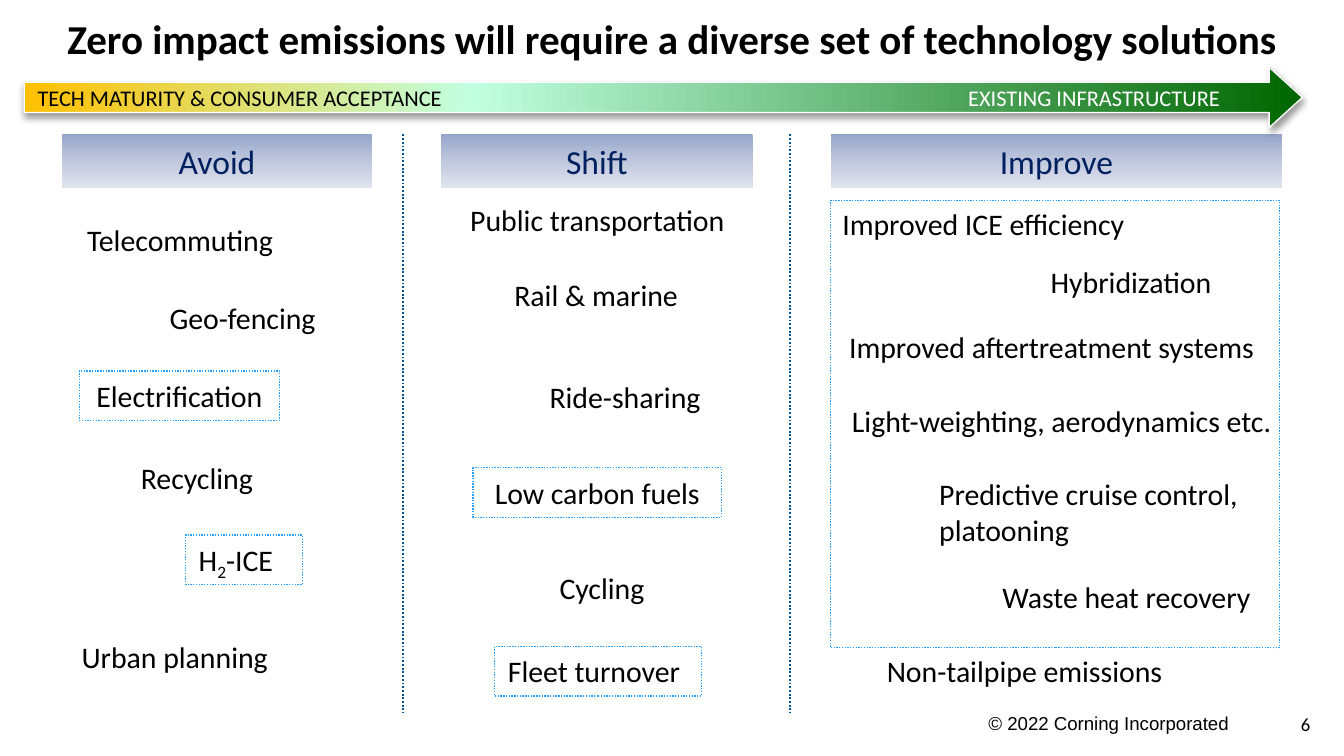
import pptx
import pptx.util
import pptx.oxml
import pptx.oxml.ns
import pptx.dml.color
import pptx.enum.text
import pptx.enum.dml
import pptx.enum.shapes
from lxml import etree

Pt = pptx.util.Pt
ALIGN = pptx.enum.text.PP_ALIGN
ANCHOR = pptx.enum.text.MSO_ANCHOR
SHAPE = pptx.enum.shapes.MSO_SHAPE
LEFT, MID, RIGHT = ALIGN.LEFT, ALIGN.CENTER, ALIGN.RIGHT

# Content: text between bars is subscript
TITLE = "Zero impact emissions will require a diverse set of technology solutions"
SPAN = ("TECH MATURITY & CONSUMER ACCEPTANCE", "EXISTING INFRASTRUCTURE")
RIGHTS = "© 2022 Corning Incorporated"
PAGE = "6"

# Column: heading, left, width, items (text, left, top, width, align, look)
COLS = [
    ("Avoid", 33.1, 166.3, [
        ("Telecommuting", 31.7, 115.2, 129.6, MID, ""),
        ("Geo-fencing", 76.3, 157, 107.3, MID, ""),
        ("Electrification", 42.5, 198.7, 107.3, MID, "line"),
        ("Recycling", 50.4, 242.6, 110.2, MID, ""),
        ("H|2|-ICE", 99.4, 286.6, 62.6, LEFT, "line fill"),
        ("Urban planning", 34.6, 338.4, 118.1, MID, ""),
    ]),
    ("Shift", 236.2, 167, [
        ("Public transportation", 244.1, 104.4, 151.9, MID, ""),
        ("Rail & marine", 243.4, 144.7, 151.9, MID, ""),
        ("Ride-sharing", 287.3, 199.4, 107.3, LEFT, ""),
        ("Low carbon fuels", 253.4, 250.6, 133.2, MID, "line"),
        ("Cycling", 260.6, 301.7, 123.8, MID, ""),
        ("Fleet turnover", 265, 346.3, 110.9, LEFT, "line fill"),
    ]),
    ("Improve", 445, 241.9, [
        ("Improved ICE efficiency", 444.2, 106.6, 167.8, LEFT, ""),
        ("Hybridization", 555.8, 137.5, 115.9, LEFT, ""),
        ("Improved aftertreatment systems", 447.8, 172.8, 234, LEFT, ""),
        ("Light-weighting, aerodynamics etc.", 447.8, 212.4, 240.5, RIGHT, ""),
        ("Predictive cruise control, platooning", 496.1, 251.3, 177.1, LEFT, ""),
        ("Waste heat recovery", 529.9, 306.7, 150.5, LEFT, "fill"),
        ("Non-tailpipe emissions", 468, 346.3, 213.1, LEFT, "fill"),
    ]),
]
RULES = (216, 423.4)
FRAME = (445, 107.3, 240.5, 239.8)

THEME = {
    "font": "Calibri", "foot": "Arial",
    "title": 22, "head": 18, "body": 16, "span": 12, "small": 10,
    "ink": "000000", "navy": "002060", "white": "FFFFFF",
    "blue": "259FFF", "rule": "005293",
    "bar": [(0, "96A5CB"), (50, "C0C8DD"), (100, "E0E4EE")],
    "arrow": [(0, "FFC000"), (35, "C1FFE1"), (100, "006600")],
}
NS = pptx.oxml.ns.nsdecls("a")


def rgb(key):
    return pptx.dml.color.RGBColor.from_string(THEME[key])


def style(font, size, color="ink", face="font"):
    font.name, font.size = THEME[face], Pt(THEME[size])
    font.color.rgb = rgb(color)


def stroke(line, color, width, dots=True):
    line.color.rgb = rgb(color)
    line.width = Pt(width)
    if dots:
        line.dash_style = pptx.enum.dml.MSO_LINE.ROUND_DOT


def blend(fill, key, angle):
    fill.gradient()
    fill.gradient_angle = angle
    stops = fill._xPr.find(".//" + pptx.oxml.ns.qn("a:gsLst"))
    stops.clear()
    for pos, color in THEME[key]:
        stops.append(pptx.oxml.parse_xml(
            f'<a:gs {NS} pos="{pos * 1000}"><a:srgbClr val="{color}"/></a:gs>'))


def write(shape, text, size, align, color="ink", face="font"):
    frame = shape.text_frame
    frame.word_wrap = True
    para = frame.paragraphs[0]
    para.alignment = align
    for num, part in enumerate(text.split("|")):
        run = para.add_run()
        run.text = part
        if num % 2:
            run._r.get_or_add_rPr().set("baseline", "-25000")
    style(para.font, size, color, face)
    return frame


def block(kind, *box):
    shape = slide.shapes.add_shape(kind, *map(Pt, box))
    shape.shadow.inherit = False
    shape.fill.background()
    shape.line.fill.background()
    shape.text_frame.vertical_anchor = ANCHOR.TOP
    return shape


def label(*box):
    return slide.shapes.add_textbox(*map(Pt, box))


deck = pptx.Presentation()
deck.slide_width, deck.slide_height = Pt(720), Pt(405)
slide = deck.slides.add_slide(deck.slide_layouts[5])

# Title
title = slide.shapes.title
title.left, title.top, title.width, title.height = map(Pt, (18, 7.2, 684, 54))
frame = write(title, TITLE, "title", MID)
frame.auto_size = pptx.enum.text.MSO_AUTO_SIZE.NONE
frame.vertical_anchor = ANCHOR.BOTTOM
frame.margin_bottom = Pt(27.8)
frame.paragraphs[0].font.bold = True

# Columns
for head, left, width, items in COLS:
    bar = block(SHAPE.RECTANGLE, left, 72, width, 28.8)
    blend(bar.fill, "bar", 270)
    write(bar, head, "head", MID, "navy")
    for text, x, y, wide, align, look in items:
        tall = 46 if "platooning" in text else 26.6
        if look:
            part = block(SHAPE.RECTANGLE, x, y, wide, tall)
        else:
            part = label(x, y, wide, tall)
        if "fill" in look:
            part.fill.solid()
            part.fill.fore_color.rgb = rgb("white")
        if "line" in look:
            stroke(part.line, "blue", 0.75)
        write(part, text, "body", align)

# Frame and column rules
stroke(block(SHAPE.RECTANGLE, *FRAME).line, "blue", 0.75)
for x in RULES:
    rule = slide.shapes.add_connector(
        pptx.enum.shapes.MSO_CONNECTOR.STRAIGHT, Pt(x), Pt(72), Pt(x), Pt(381.6))
    stroke(rule.line, "rule", 1)
    etree.SubElement(rule._element.spPr, pptx.oxml.ns.qn("a:effectLst"))

# Gradient arrow, its second label on a right tab
arrow = block(SHAPE.RIGHT_ARROW, 13, 36, 684.7, 32.4)
arrow.adjustments[0], arrow.adjustments[1] = 0.5, 0.55
blend(arrow.fill, "arrow", 0)
stroke(arrow.line, "white", 0.75, False)
shade = arrow._element.spPr.find(pptx.oxml.ns.qn("a:effectLst"))
shade.append(pptx.oxml.parse_xml(
    f'<a:outerShdw {NS} blurRad="{Pt(3.1)}" dist="{Pt(1.6)}" dir="5400000" '
    'rotWithShape="0"><a:srgbClr val="000000"><a:alpha val="38000"/>'
    '</a:srgbClr></a:outerShdw>'))
frame = arrow.text_frame
frame.vertical_anchor = ANCHOR.MIDDLE
frame.margin_top = frame.margin_bottom = 0
para = frame.paragraphs[0]
para.alignment = LEFT
para._p.get_or_add_pPr().append(pptx.oxml.parse_xml(
    f'<a:tabLst {NS}><a:tab pos="{Pt(633.6)}" algn="r"/></a:tabLst>'))
for text, color in zip((SPAN[0] + "\t", SPAN[1]), ("ink", "white")):
    run = para.add_run()
    run.text = text
    style(run.font, "span", color)

# Footer
write(label(360, 378, 305.2, 19.4), RIGHTS, "small", RIGHT, face="foot")
frame = write(label(666, 380.9, 36, 14.4), PAGE, "small", RIGHT)
frame.margin_left = frame.margin_right = 0
frame.vertical_anchor = ANCHOR.MIDDLE

deck.save("out.pptx")
